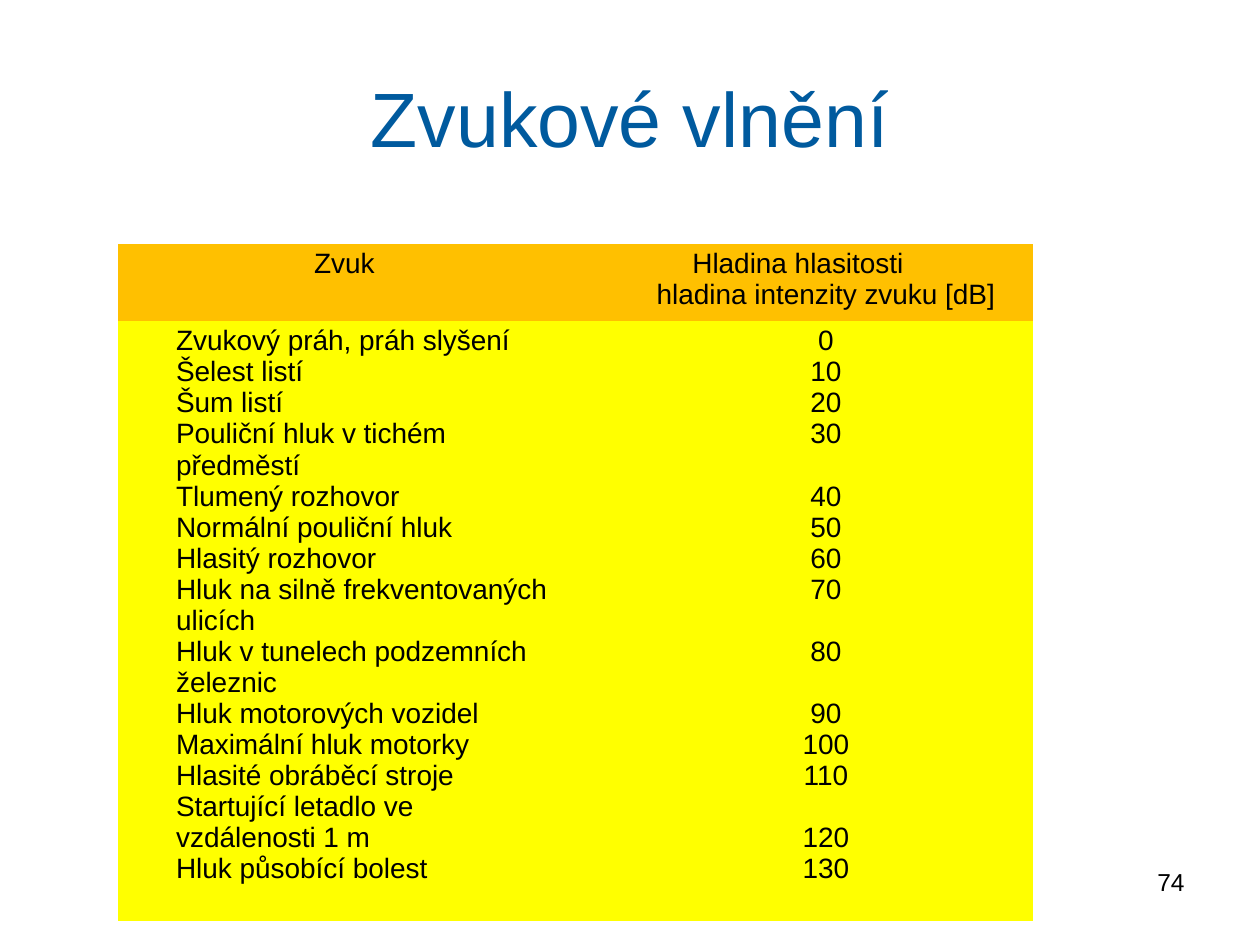
from dataclasses import dataclass

import pptx
import pptx.dml.color
import pptx.enum.text
import pptx.util
from pptx.util import Cm, Pt

COLORS = {"title": "005A9E", "text": "000000", "header": "FFC000", "body": "FFFF00"}
ALIGN = pptx.enum.text.PP_ALIGN
FONT = "Arial"
LINE_PITCH = Pt(17.75)
INDENT = Cm(0.97)
NO_GRID_STYLE = "{2D5ABB26-0587-4C30-8999-92F81FD0307C}"


@dataclass
class Sound:
    name: str
    level: int
    lines_before: int = 0  # free lines above the level, where names wrap


SOUNDS = [
    Sound("Zvukový práh, práh slyšení", 0),
    Sound("Šelest listí", 10),
    Sound("Šum listí", 20),
    Sound("Pouliční hluk v tichém předměstí", 30),
    Sound("Tlumený rozhovor", 40, 1),
    Sound("Normální pouliční hluk", 50),
    Sound("Hlasitý rozhovor", 60),
    Sound("Hluk na silně frekventovaných ulicích", 70),
    Sound("Hluk v tunelech podzemních železnic", 80, 1),
    Sound("Hluk motorových vozidel", 90, 1),
    Sound("Maximální hluk motorky", 100),
    Sound("Hlasité obráběcí stroje", 110),
    Sound("Startující letadlo ve vzdálenosti 1 m", 120, 1),
    Sound("Hluk působící bolest", 130),
]


def rgb(name: str) -> pptx.dml.color.RGBColor:
    return pptx.dml.color.RGBColor.from_string(COLORS[name])


def style(para, size: float, color: str, align) -> None:
    para.alignment = align
    para.font.name = FONT
    para.font.size = Pt(size)
    para.font.color.rgb = rgb(color)


def set_indent(para, first_line: int = 0) -> None:
    properties = para._p.get_or_add_pPr()
    properties.set("marL", str(INDENT))
    properties.set("indent", str(first_line))


def fill_cell(cell, color: str) -> None:
    cell.fill.solid()
    cell.fill.fore_color.rgb = rgb(color)
    cell.margin_left = cell.margin_right = Cm(0.2)
    cell.margin_top = cell.margin_bottom = Cm(0.1)


def write_header(cell, lines: list[str]) -> None:
    fill_cell(cell, "header")
    para = cell.text_frame.paragraphs[0]
    for number, line in enumerate(lines):
        if number:
            para.add_line_break()
        para.add_run().text = line
    set_indent(para, -INDENT)
    style(para, 16, "text", ALIGN.CENTER)


def write_column(cell, texts: list[str], align) -> list:
    """Write one paragraph per text and return the paragraphs."""
    fill_cell(cell, "body")
    cell.text_frame.text = "\n".join(texts)
    paras = list(cell.text_frame.paragraphs)
    for para in paras:
        set_indent(para)
        para.line_spacing = LINE_PITCH
        style(para, 16, "text", align)
    return paras


def add_title(page, text: str) -> None:
    title = page.shapes.title
    title.left, title.top, title.width, title.height = Cm(1.27), Cm(0.76), Cm(22.86), Cm(3.18)
    title.text_frame.text = text
    title.text_frame.vertical_anchor = pptx.enum.text.MSO_ANCHOR.MIDDLE
    style(title.text_frame.paragraphs[0], 44, "title", ALIGN.CENTER)


def add_page_number(page, number: int) -> None:
    box = page.shapes.add_textbox(Cm(18.2), Cm(17.35), Cm(5.93), Cm(1.32))
    box.text_frame.word_wrap = True
    box.text_frame.text = str(number)
    style(box.text_frame.paragraphs[0], 14, "text", ALIGN.RIGHT)


def add_sound_table(page) -> None:
    widths, heights = [Cm(9.12), Cm(9.33)], [Cm(1.53), Cm(12.11)]
    frame = page.shapes.add_table(2, 2, Cm(2.38), Cm(4.91), sum(widths), sum(heights))
    table = frame.table
    table.first_row = table.horz_banding = False
    table._tbl.tblPr[0].text = NO_GRID_STYLE
    for column, width in zip(table.columns, widths):
        column.width = width
    for row, height in zip(table.rows, heights):
        row.height = height

    write_header(table.cell(0, 0), ["Zvuk"])
    write_header(table.cell(0, 1), ["Hladina hlasitosti ", "hladina intenzity zvuku [dB]"])
    write_column(table.cell(1, 0), [sound.name for sound in SOUNDS], ALIGN.LEFT)
    levels = write_column(table.cell(1, 1), [str(sound.level) for sound in SOUNDS], ALIGN.CENTER)
    for para, sound in zip(levels, SOUNDS):
        if sound.lines_before:
            para.space_before = sound.lines_before * LINE_PITCH


def main() -> None:
    deck = pptx.Presentation()
    deck.slide_width, deck.slide_height = Cm(25.4), Cm(19.05)
    page = deck.slides.add_slide(deck.slide_layouts.get_by_name("Title Only"))
    add_title(page, "Zvukové vlnění")
    add_page_number(page, 74)
    add_sound_table(page)
    deck.save("out.pptx")


if __name__ == "__main__":
    main()
